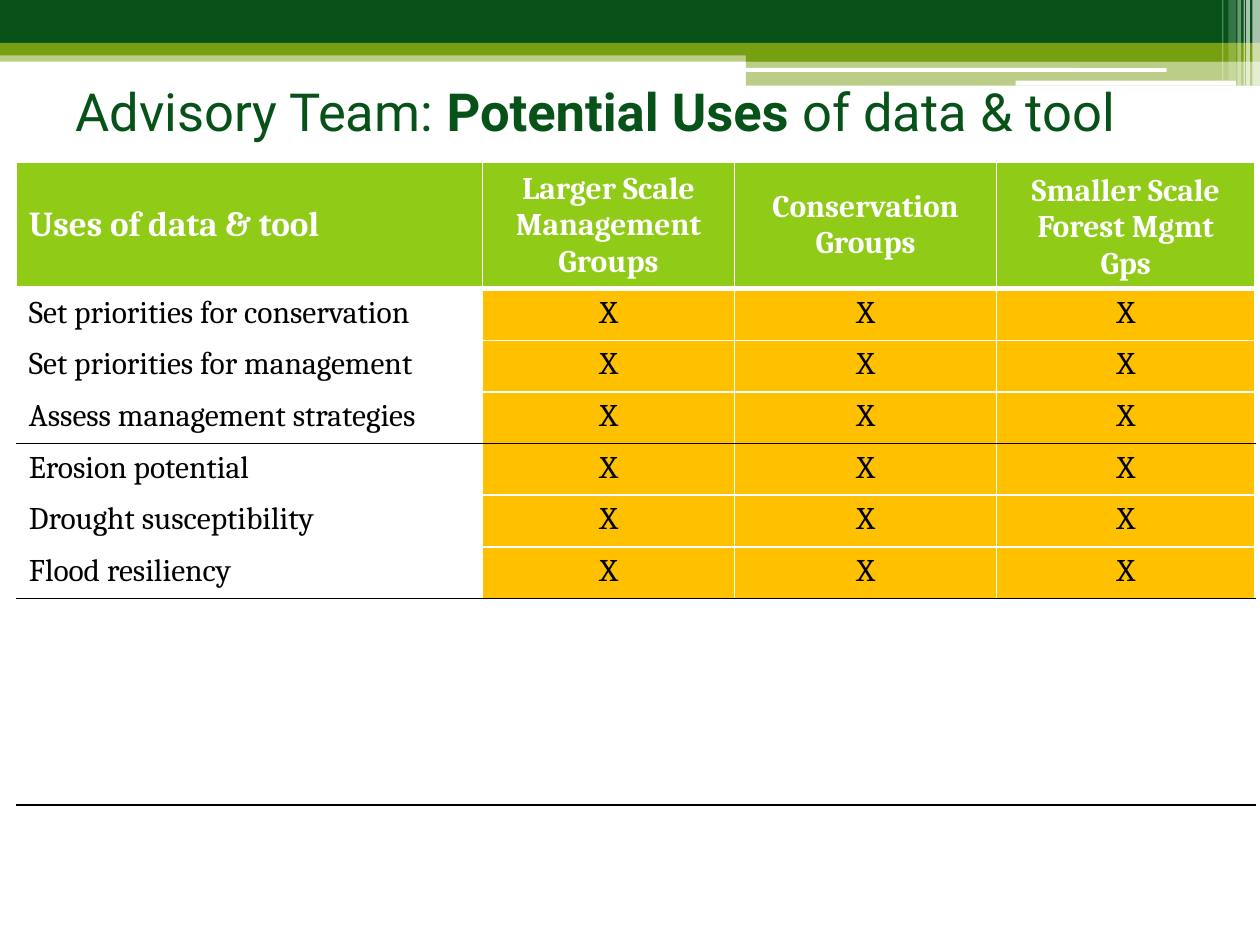
from lxml.etree import SubElement
from pptx import Presentation
from pptx.dml.color import RGBColor
from pptx.enum.shapes import MSO_SHAPE
from pptx.enum.text import MSO_ANCHOR, PP_ALIGN
from pptx.oxml.ns import qn
from pptx.util import Inches, Pt

DARK, OLIVE, WHITE, BLACK = "065218", "769F11", "FFFFFF", "000000"
LIME, AMBER = "8FCB17", "FFC000"

BANDS = [
    (0, 0.4, 10, 0.09, OLIVE, 50),
    (0, 0, 10, 0.34, DARK, 100),
    (0, 0.34, 10, 0.1, OLIVE, 100),
    (5.92, 0.39, 4.08, 0.1, OLIVE, 100),
    (5.92, 0.48, 4.08, 0.2, OLIVE, 50),
]
ROUNDED_BARS = [
    (5.91, 0.54, 3.35, 0.03, WHITE, 100),
    (8.06, 0.64, 1.75, 0.04, WHITE, 100),
]
STRIPES = [
    (9.94, 0.06, 0.68, 65),
    (9.89, 0.03, 0.68, 65),
    (9.87, 0.01, 0.68, 60),
    (9.82, 0.03, 0.68, 40),
    (9.75, 0.06, 0.64, 20),
    (9.7, 0.01, 0.64, 30),
]
TITLE = [("Advisory Team: ", False), ("Potential Uses ", True), ("of data & tool", False)]
HEADINGS = [
    "Uses of data & tool",
    "Larger Scale Management Groups",
    "Conservation Groups",
    "Smaller Scale Forest Mgmt Gps",
]
USES = [
    "Set priorities for conservation",
    "Set priorities for management",
    "Assess management strategies",
    "Erosion potential",
    "Drought susceptibility",
    "Flood resiliency",
]
COLUMN_WIDTHS = [3.7, 2, 2.08, 2.05]
HEADER_HEIGHT, ROW_HEIGHT, ROW_COUNT = 0.94, 0.41, 13
RULED_ROWS = {3, 6, 10}


def color(value):
    return RGBColor.from_string(value)


def add_bar(page, left, top, width, height, fill, opacity, kind=MSO_SHAPE.RECTANGLE):
    bar = page.shapes.add_shape(kind, Inches(left), Inches(top), Inches(width), Inches(height))
    bar.shadow.inherit = False
    bar.line.fill.background()
    bar.fill.solid()
    bar.fill.fore_color.rgb = color(fill)
    if opacity < 100:
        tint = bar.fill._xPr.find(qn("a:solidFill"))[0]
        SubElement(tint, qn("a:alpha"), val=str(opacity * 1000))


def add_text(para, text, size=18, font="Cambria", fill=BLACK, bold=False, align=PP_ALIGN.LEFT):
    para.alignment = align
    span = para.add_run()
    span.text = text
    span.font.size = Pt(size)
    span.font.name = font
    span.font.bold = bold
    span.font.color.rgb = color(fill)


def set_border(cell, side, fill, width):
    line = SubElement(cell._tc.get_or_add_tcPr(), qn(f"a:ln{side}"), w=str(Pt(width)))
    SubElement(SubElement(line, qn("a:solidFill")), qn("a:srgbClr"), val=fill)


def rule_below(row):
    if row == 0:
        return WHITE, 3
    return (BLACK if row in RULED_ROWS else WHITE), 1


def format_cell(cell, row, column):
    set_border(cell, "L", WHITE, 1)
    set_border(cell, "R", WHITE, 1)
    set_border(cell, "T", *(rule_below(row - 1) if row else (WHITE, 1)))
    set_border(cell, "B", *rule_below(row))
    para = cell.text_frame.paragraphs[0]
    align = PP_ALIGN.CENTER if column else PP_ALIGN.LEFT
    fill = WHITE
    if row == 0:
        fill = LIME
        cell.vertical_anchor = MSO_ANCHOR.BOTTOM if column == 3 else MSO_ANCHOR.MIDDLE
        add_text(para, HEADINGS[column], size=18 if column else 20, fill=WHITE, bold=True, align=align)
    elif row <= len(USES):
        fill = AMBER if column else WHITE
        add_text(para, "X" if column else USES[row - 1], align=align)
    cell.fill.solid()
    cell.fill.fore_color.rgb = color(fill)


def add_uses_table(page):
    height = HEADER_HEIGHT + ROW_HEIGHT * (ROW_COUNT - 1)
    table = page.shapes.add_table(
        ROW_COUNT, len(HEADINGS), Inches(0.13), Inches(1.29), Inches(sum(COLUMN_WIDTHS)), Inches(height)
    ).table
    table.horz_banding = False
    for column, width in zip(table.columns, COLUMN_WIDTHS):
        column.width = Inches(width)
    for row_index, row in enumerate(table.rows):
        row.height = Inches(ROW_HEIGHT if row_index else HEADER_HEIGHT)
        for column_index, cell in enumerate(row.cells):
            format_cell(cell, row_index, column_index)


def add_title(page):
    box = page.shapes.add_textbox(Inches(0.5), Inches(0.46), Inches(9), Inches(0.83))
    box.text_frame.word_wrap = True
    box.text_frame.vertical_anchor = MSO_ANCHOR.MIDDLE
    for text, bold in TITLE:
        add_text(box.text_frame.paragraphs[0], text, size=30, font="Roboto", fill=DARK, bold=bold)


def main():
    deck = Presentation()
    deck.slide_width, deck.slide_height = Inches(10), Inches(7.5)
    page = deck.slides.add_slide(deck.slide_layouts[6])
    for band in BANDS:
        add_bar(page, *band)
    for bar in ROUNDED_BARS:
        add_bar(page, *bar, kind=MSO_SHAPE.ROUNDED_RECTANGLE)
    for left, width, height, opacity in STRIPES:
        add_bar(page, left, 0, width, height, WHITE, opacity)
    add_title(page)
    add_uses_table(page)
    deck.save("out.pptx")


if __name__ == "__main__":
    main()
